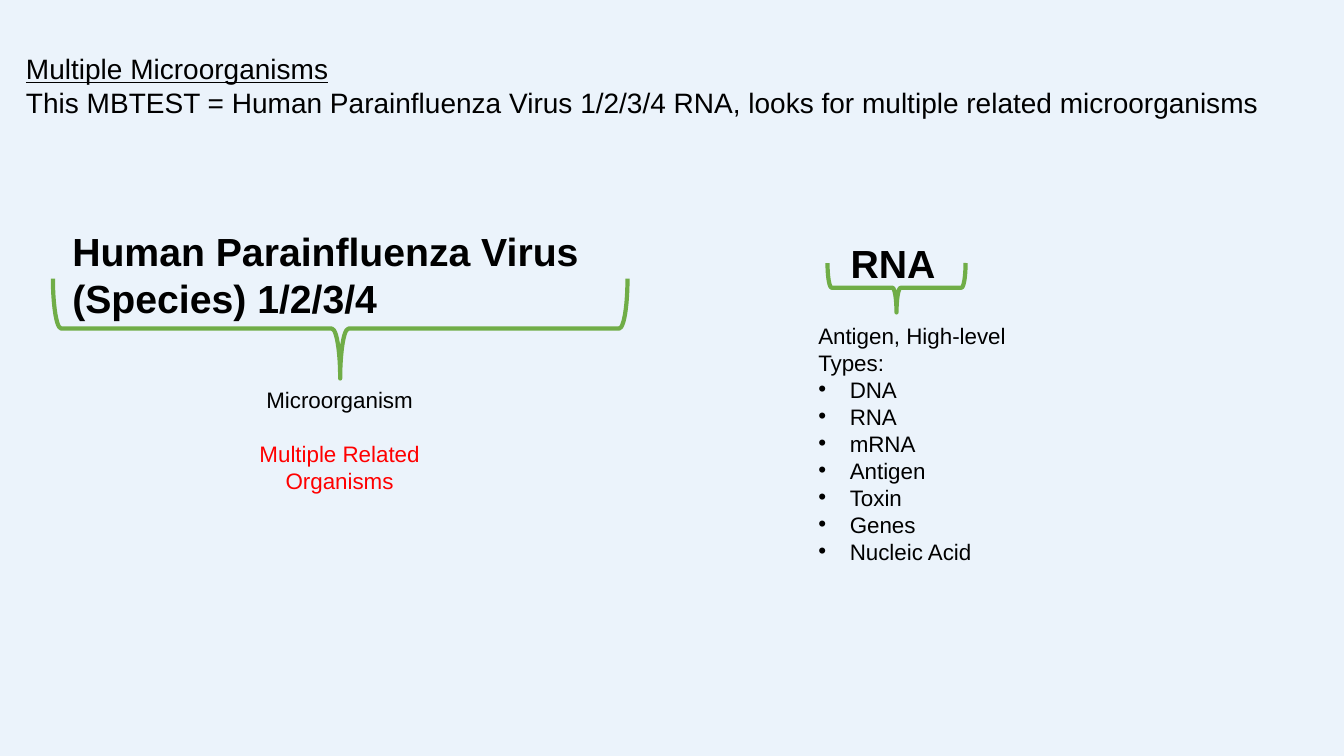
from pptx import Presentation
from pptx.util import Pt
from pptx.dml.color import RGBColor
from pptx.enum import shapes, text
from lxml import etree

COLORS = {"background": "EBF3FB", "text": "000000", "accent": "FF0000", "brace": "70AD47"}
LINE_HEIGHT = 1.205  # line pitch relative to font size
BULLET_INDENT = 22.5


def add_line(box, words, size, color="text", bold=False, underline=False,
             align=text.PP_ALIGN.LEFT, before=0, bullet=False):
    """Add one paragraph, filling the empty first one if it is still free."""
    frame = box.text_frame
    para = frame.add_paragraph() if frame.text else frame.paragraphs[0]
    para.alignment = align
    para.line_spacing = Pt(round(size * LINE_HEIGHT, 1))
    para.space_before = Pt(before)
    span = para.add_run()
    span.text = words
    span.font.name = "Arial"
    span.font.size = Pt(size)
    span.font.bold = bold
    span.font.underline = underline
    span.font.color.rgb = RGBColor.from_string(COLORS[color])
    if bullet:
        props = para._p.get_or_add_pPr()
        props.set("marL", str(Pt(BULLET_INDENT)))
        props.set("indent", str(-Pt(BULLET_INDENT)))
        namespace = props.nsmap["a"]
        etree.SubElement(props, f"{{{namespace}}}buFont", typeface="Arial")
        etree.SubElement(props, f"{{{namespace}}}buChar", char="•")


# Page
deck = Presentation()
deck.slide_width, deck.slide_height = Pt(960), Pt(540)
page = deck.slides.add_slide(deck.slide_layouts[6])
page.background.fill.solid()
page.background.fill.fore_color.rgb = RGBColor.from_string(COLORS["background"])

# Braces, turned so that they point down
for left, top, width, height in [(207.4, 29.5, 71.3, 410.4), (622.8, 156.2, 35.3, 98.6)]:
    brace = page.shapes.add_shape(shapes.MSO_SHAPE.LEFT_BRACE,
                                  Pt(left), Pt(top), Pt(width), Pt(height))
    brace.rotation = 270
    brace.shadow.inherit = False
    brace.fill.background()
    brace.line.color.rgb = RGBColor.from_string(COLORS["brace"])
    brace.line.width = Pt(3)

# Text boxes
places = {
    "organism": (44.6, 158.4, 517, 74.9),
    "category": (149, 272.2, 187.2, 85),
    "antigen": (577.4, 226.1, 205.2, 181.4),
    "heading": (11.5, 33.1, 921.6, 55.4),
    "rna": (600.5, 167, 79.9, 41),
}
boxes = {}
for name, place in places.items():
    boxes[name] = page.shapes.add_textbox(*map(Pt, place))
    boxes[name].text_frame.word_wrap = True

# Heading
add_line(boxes["heading"], "Multiple Microorganisms", 20, underline=True)
add_line(boxes["heading"], "This MBTEST = Human Parainfluenza Virus 1/2/3/4 RNA, "
         "looks for multiple related microorganisms", 20)

# Microorganism part
for words in ["Human Parainfluenza Virus", "(Species) 1/2/3/4"]:
    add_line(boxes["organism"], words, 28, bold=True)
add_line(boxes["category"], "Microorganism", 16, align=text.PP_ALIGN.CENTER)
add_line(boxes["category"], "Multiple Related Organisms", 16, color="accent",
         align=text.PP_ALIGN.CENTER, before=19.3)

# Antigen part
add_line(boxes["rna"], "RNA", 28, bold=True)
for words in ["Antigen, High-level", "Types:"]:
    add_line(boxes["antigen"], words, 16)
for words in ["DNA", "RNA", "mRNA", "Antigen", "Toxin", "Genes", "Nucleic Acid"]:
    add_line(boxes["antigen"], words, 16, bullet=True)

deck.save("out.pptx")
